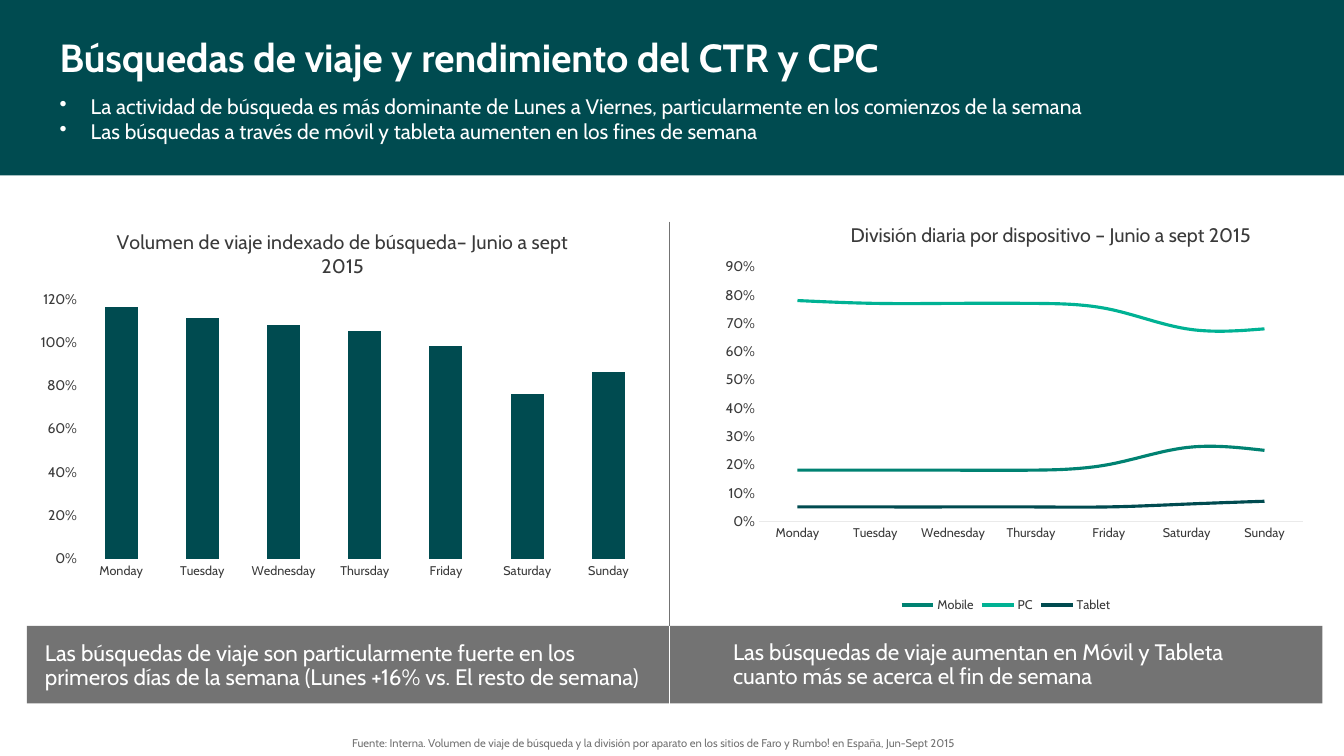
import pptx
import pptx.chart.data
import pptx.dml.color
import pptx.enum.chart
import pptx.enum.shapes
import pptx.enum.text
import pptx.oxml.ns
import pptx.oxml.xmlchemy
import pptx.util

FONT = "Cabin"
COLORS = {"deep": "004B50", "teal": "008272", "mint": "00B294", "gray": "737373",
          "ink": "3A3A3A", "pale": "EAEAEA", "white": "FFFFFF"}
RGB = {name: pptx.dml.color.RGBColor.from_string(value) for name, value in COLORS.items()}
DAYS = ["Monday", "Tuesday", "Wednesday", "Thursday", "Friday", "Saturday", "Sunday"]
DIVIDER = 49.8

presentation = pptx.Presentation()
presentation.slide_width = pptx.util.Inches(13.33)
presentation.slide_height = pptx.util.Inches(7.5)
slide = presentation.slides.add_slide(presentation.slide_layouts[5])
shapes = slide.shapes


def share(*percents):
    """Turn percentages of the slide (across, down, across, down) into lengths."""
    sides = (presentation.slide_width, presentation.slide_height) * 2
    return [int(side * percent / 100) for side, percent in zip(sides, percents)]


def write(shape, lines, size, color, bold=False, inset=0, spacing=1.0, bullet=False):
    frame = shape.text_frame
    frame.word_wrap = True
    frame.auto_size = pptx.enum.text.MSO_AUTO_SIZE.NONE
    frame.vertical_anchor = pptx.enum.text.MSO_ANCHOR.TOP
    frame.margin_left = frame.margin_right = pptx.util.Inches(inset)
    frame.margin_top = frame.margin_bottom = pptx.util.Inches(inset / 2)
    for index, line in enumerate(lines):
        paragraph = frame.add_paragraph() if index else frame.paragraphs[0]
        paragraph.alignment = pptx.enum.text.PP_ALIGN.LEFT
        paragraph.line_spacing = spacing
        if bullet:
            properties = paragraph._p.get_or_add_pPr()
            indent = pptx.util.Inches(0.31)
            properties.set("marL", str(indent))
            properties.set("indent", str(-indent))
            mark = pptx.oxml.xmlchemy.OxmlElement("a:buChar")
            mark.set("char", "•")
            properties.append(mark)
        run = paragraph.add_run()
        run.text = line
        run.font.name, run.font.size, run.font.bold = FONT, pptx.util.Pt(size), bold
        run.font.color.rgb = RGB[color]


# Bottom band and header band
for place, color in [((2, 82.8, 96.4, 10.27), "gray"), ((0, 0, 100, 23.2), "deep")]:
    band = shapes.add_shape(pptx.enum.shapes.MSO_SHAPE.RECTANGLE, *share(*place))
    band.shadow.inherit = False
    band.fill.solid()
    band.fill.fore_color.rgb = RGB[color]
    band.line.fill.background()

# Title, raised above the header band
title = shapes.title
title.left, title.top, title.width, title.height = share(4.43, 4.4, 81.2, 7.6)
write(title, ["Búsquedas de viaje y rendimiento del CTR y CPC"], 28, "white", bold=True)
band.element.addnext(title.element)

# Divider between the two halves
for top, bottom, color in [(29.33, 82.8, "gray"), (82.8, 93.07, "white")]:
    divider = shapes.add_connector(pptx.enum.shapes.MSO_CONNECTOR.STRAIGHT,
                                   *share(DIVIDER, top, DIVIDER, bottom))
    divider.line.color.rgb = RGB[color]
    divider.line.width = pptx.util.Pt(0.75)
    divider.element.spPr.append(pptx.oxml.xmlchemy.OxmlElement("a:effectLst"))

# Header bullets, takeaways, chart caption and source
texts = [
    ((4.43, 12.4, 91.6, 8.53),
     ["La actividad de búsqueda es más dominante de Lunes a Viernes, "
      "particularmente en los comienzos de la semana",
      "Las búsquedas a través de móvil y tableta aumenten en los fines de semana"],
     15, "white", {"bullet": True}),
    ((2.6, 84.27, 47.1, 7.87),
     ["Las búsquedas de viaje son particularmente fuerte en los primeros días de la semana "
      "(Lunes +16% vs. El resto de semana)"],
     16, "white", {"inset": 0.1, "spacing": 0.9}),
    ((53.8, 84.13, 42.15, 7.87),
     ["Las búsquedas de viaje aumentan en Móvil y Tableta cuanto más se acerca "
      "el fin de semana"],
     16, "white", {"inset": 0.1, "spacing": 0.9}),
    ((63.3, 29.47, 32, 5.47),
     ["División diaria por dispositivo – Junio a sept 2015"], 14, "ink", {}),
    ((26.2, 97.6, 70, 2),
     ["Fuente: Interna. Volumen de viaje de búsqueda y la división por aparato en los sitios "
      "de Faro y Rumbo! en España, Jun-Sept 2015"],
     8, "gray", {"spacing": 0.9}),
]
for place, lines, size, color, options in texts:
    write(shapes.add_textbox(*share(*place)), lines, size, color, **options)

# Charts: weekly volume and split by device
chart_types = pptx.enum.chart.XL_CHART_TYPE
charts = [
    (chart_types.COLUMN_CLUSTERED, (2, 28, 47, 49.47), (0.085, 0.233, 0.9, 0.695), 1.2, 0.2,
     [("Series 1", [1.16, 1.11, 1.08, 1.05, 0.98, 0.76, 0.86], "deep")]),
    (chart_types.LINE, (51.25, 32.53, 47.2, 49.07), (0.11, 0.056, 0.859, 0.686), 0.9, 0.1,
     [("Mobile", [0.18, 0.18, 0.18, 0.18, 0.2, 0.26, 0.25], "teal"),
      ("PC", [0.78, 0.77, 0.77, 0.77, 0.75, 0.68, 0.68], "mint"),
      ("Tablet", [0.05, 0.05, 0.05, 0.05, 0.05, 0.06, 0.07], "deep")]),
]
for chart_type, place, plot_area, maximum, step, rows in charts:
    data = pptx.chart.data.CategoryChartData(number_format="0%")
    data.categories = DAYS
    for name, values, color in rows:
        data.add_series(name, values)
    chart = shapes.add_chart(chart_type, *share(*place), data).chart
    chart.font.name, chart.font.size = FONT, pptx.util.Pt(10)
    chart.font.color.rgb = RGB["gray"]
    plot = chart.plots[0]
    plot.vary_by_categories = False
    is_line = chart_type == chart_types.LINE

    # Axes
    for axis, size in [(chart.category_axis, 9), (chart.value_axis, 10)]:
        axis.has_major_gridlines = False
        axis.major_tick_mark = axis.minor_tick_mark = pptx.enum.chart.XL_TICK_MARK.NONE
        axis.format.line.fill.background()
        font = axis.tick_labels.font
        font.name, font.size = FONT, pptx.util.Pt(size)
        font.color.rgb = RGB["ink"]
    axis.minimum_scale, axis.maximum_scale, axis.major_unit = 0, maximum, step
    axis.tick_labels.number_format = "0%"
    axis.tick_labels.number_format_is_linked = False

    # Series, title and legend
    for series, (name, values, color) in zip(plot.series, rows):
        if is_line:
            series.smooth = True
            series.marker.style = pptx.enum.chart.XL_MARKER_STYLE.NONE
            series.format.line.color.rgb = RGB[color]
            series.format.line.width = pptx.util.Pt(2.25)
        else:
            series.format.fill.solid()
            series.format.fill.fore_color.rgb = RGB[color]
    chart.has_title = not is_line
    chart.has_legend = is_line
    if is_line:
        chart.category_axis.format.line.color.rgb = RGB["pale"]
        chart.category_axis.format.line.width = pptx.util.Pt(0.75)
        chart.legend.position = pptx.enum.chart.XL_LEGEND_POSITION.BOTTOM
        chart.legend.include_in_layout = False
        font = chart.legend.font
        font.size = pptx.util.Pt(9)
    else:
        plot.gap_width, plot.overlap = 146, -27
        run = chart.chart_title.text_frame.paragraphs[0].add_run()
        run.text = "Volumen de viaje indexado de búsqueda– Junio a sept 2015"
        font = run.font
        font.size, font.bold = pptx.util.Pt(14), False
    font.name = FONT
    font.color.rgb = RGB["ink"]

    # Fixed inner plot area
    area = chart.element.find(".//" + pptx.oxml.ns.qn("c:plotArea"))
    for old_layout in area.findall(pptx.oxml.ns.qn("c:layout")):
        area.remove(old_layout)
    layout = pptx.oxml.xmlchemy.OxmlElement("c:layout")
    manual = pptx.oxml.xmlchemy.OxmlElement("c:manualLayout")
    settings = [("layoutTarget", "inner"), ("xMode", "edge"), ("yMode", "edge"),
                *zip("xywh", plot_area)]
    for tag, value in settings:
        setting = pptx.oxml.xmlchemy.OxmlElement("c:" + tag)
        setting.set("val", str(value))
        manual.append(setting)
    layout.append(manual)
    area.insert(0, layout)

presentation.save("out.pptx")
